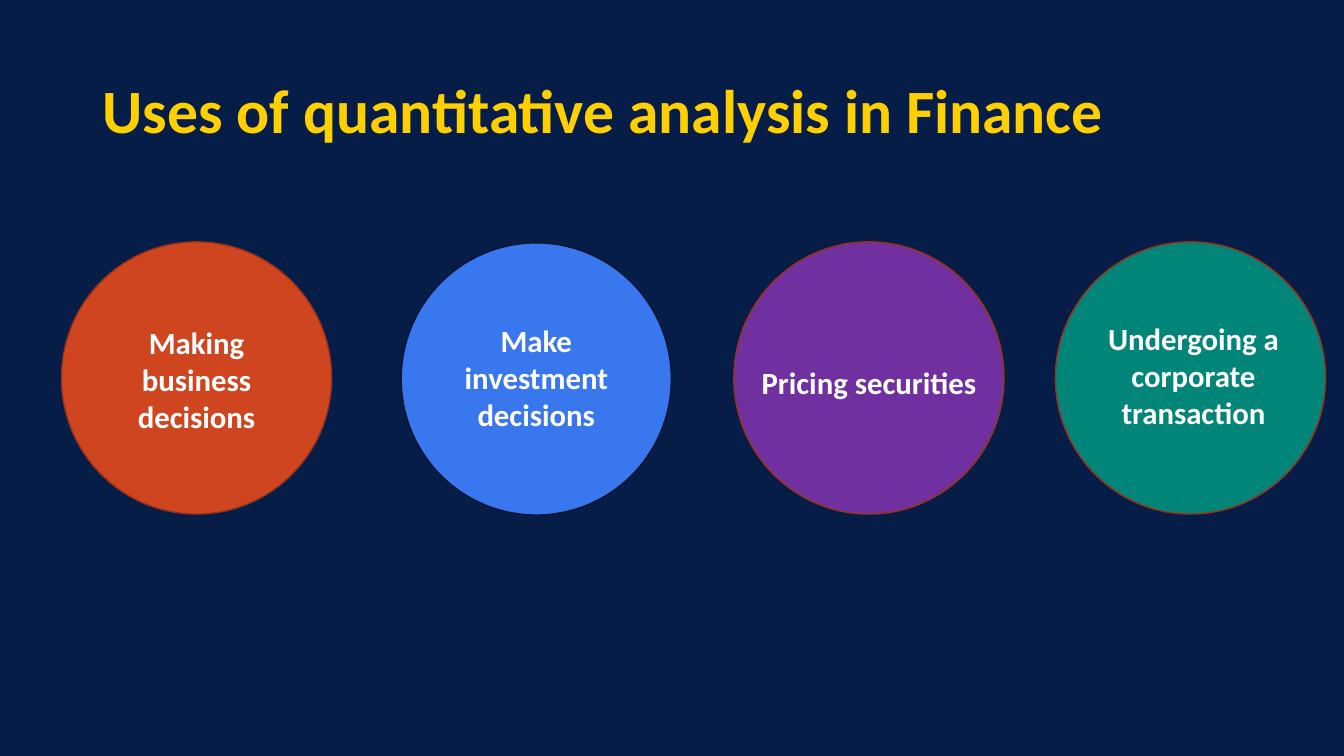
from dataclasses import dataclass
from typing import Any

from pptx import Presentation
from pptx.dml.color import RGBColor
from pptx.enum.shapes import MSO_SHAPE
from pptx.enum.text import MSO_ANCHOR, MSO_AUTO_SIZE, PP_ALIGN
from pptx.util import Inches, Pt

OVAL = MSO_SHAPE.OVAL
LEFT, CENTER = PP_ALIGN.LEFT, PP_ALIGN.CENTER
MIDDLE = MSO_ANCHOR.MIDDLE
NO_FIT, GROW = MSO_AUTO_SIZE.NONE, MSO_AUTO_SIZE.SHAPE_TO_FIT_TEXT

# Grid: ten columns and ten rows to the inch
CELL = Inches(0.1)
COLUMNS, ROWS = 133.33, 75
CIRCLE_COLUMNS, CIRCLE_ROWS = 26.8, 27

NAVY, GOLD, WHITE, RUST = "061D48", "FFD000", "FFFFFF", "993318"
TITLE_FONT = {"name": "Calibri", "size": Pt(44), "bold": True}
LABEL_FONT = {"name": "Calibri", "size": Pt(22), "bold": True}


@dataclass
class Area:
    column: float
    row: float
    columns: float
    rows: float

    def lengths(self) -> tuple[int, ...]:
        cells = (self.column, self.row, self.columns, self.rows)
        return tuple(round(cell * CELL) for cell in cells)


@dataclass
class Use:
    text: str
    column: float
    row: float
    fill: str
    label: Area
    outline: str = RUST
    wrap: bool = True


USES = [
    Use("Making business decisions", 6.1, 24, "CF4520", Area(9.3, 31.6, 20.4, 12.1)),
    Use("Make investment decisions", 39.8, 24.1, "3877EE",
        Area(41.3, 31.4, 23.8, 12.1), outline="041535"),
    Use("Pricing securities", 72.8, 24, "7030A0",
        Area(74.4, 35.6, 23.6, 4.7), wrap=False),
    Use("Undergoing a corporate transaction", 104.7, 24, "008578",
        Area(107.9, 31.2, 21, 12.1)),
]


def color(value: str) -> RGBColor:
    return RGBColor.from_string(value)


def set_values(target: Any, values: dict[str, Any]) -> None:
    for name, value in values.items():
        setattr(target, name, value)


def write(box: Any, text: str, font: dict[str, Any], ink: str,
          frame: dict[str, Any], layout: dict[str, Any]) -> None:
    set_values(box.text_frame, frame)
    para = box.text_frame.paragraphs[0]
    set_values(para, layout)
    span = para.add_run()
    span.text = text
    set_values(span.font, font)
    span.font.color.rgb = color(ink)


def add_title(page: Any, text: str) -> None:
    title = page.shapes.title
    area = Area(9.2, 4, 115, 14.5).lengths()
    set_values(title, dict(zip(("left", "top", "width", "height"), area)))
    write(title, text, TITLE_FONT, GOLD,
          {"word_wrap": True, "auto_size": NO_FIT, "vertical_anchor": MIDDLE},
          {"alignment": LEFT, "line_spacing": 0.9})


def add_use(page: Any, use: Use) -> None:
    area = Area(use.column, use.row, CIRCLE_COLUMNS, CIRCLE_ROWS)
    circle = page.shapes.add_shape(OVAL, *area.lengths())
    circle.shadow.inherit = False
    circle.fill.solid()
    circle.fill.fore_color.rgb = color(use.fill)
    circle.line.color.rgb = color(use.outline)
    circle.line.width = Pt(1)

    label = page.shapes.add_textbox(*use.label.lengths())
    write(label, use.text, LABEL_FONT, WHITE,
          {"word_wrap": use.wrap, "auto_size": GROW}, {"alignment": CENTER})


def main() -> None:
    deck = Presentation()
    deck.slide_width = round(COLUMNS * CELL)
    deck.slide_height = ROWS * CELL

    # Title-only page on a navy background
    page = deck.slides.add_slide(deck.slide_layouts[5])
    page.background.fill.solid()
    page.background.fill.fore_color.rgb = color(NAVY)
    add_title(page, "Uses of quantitative analysis in Finance")

    # Circles with their labels
    for use in USES:
        add_use(page, use)

    deck.save("out.pptx")


if __name__ == "__main__":
    main()
